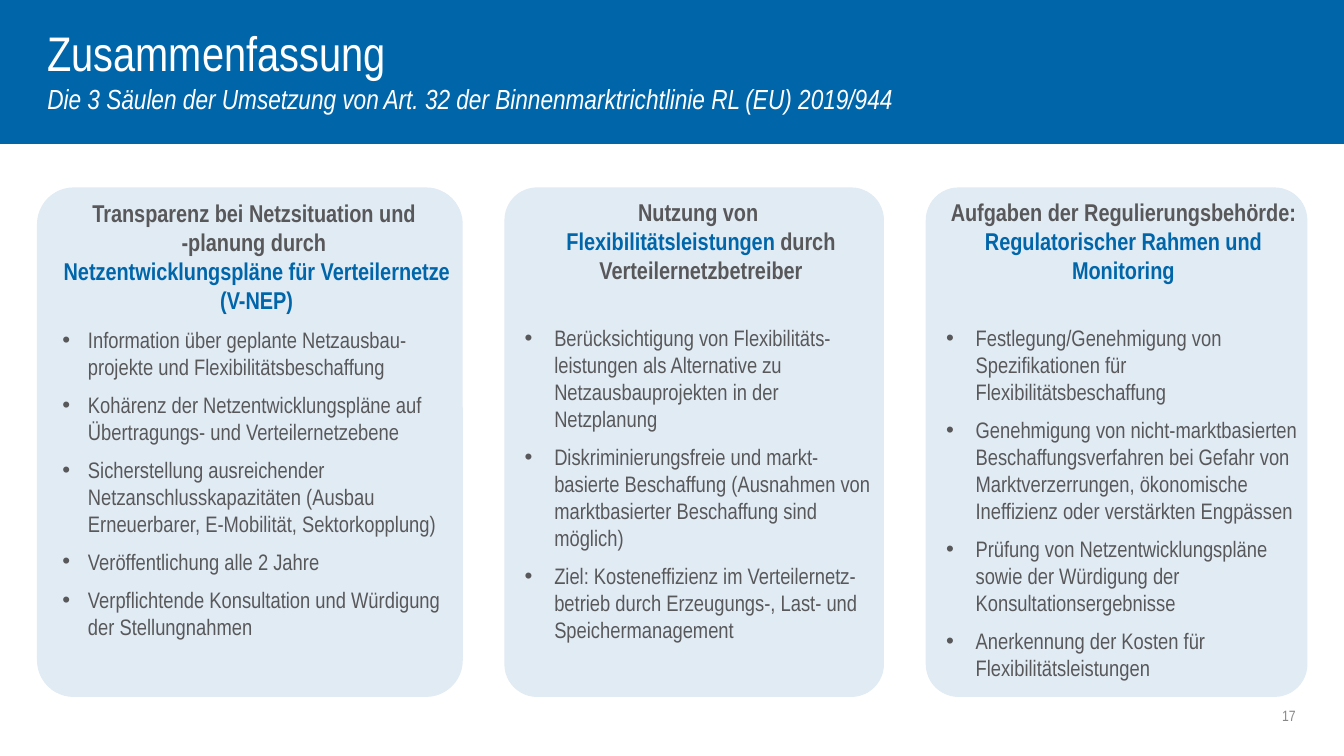
from typing import NamedTuple

from lxml.etree import SubElement
from pptx import Presentation
from pptx.dml.color import RGBColor
from pptx.enum.shapes import MSO_SHAPE
from pptx.enum.text import MSO_ANCHOR, MSO_AUTO_SIZE, PP_ALIGN
from pptx.oxml.ns import qn
from pptx.util import Inches, Pt

FONT = "Arial Narrow"
BLUE, PALE, GREY, LIGHT_GREY, WHITE = "0066A9", "E1EBF4", "58585A", "87888A", "FFFFFF"
SLIDE_WIDTH = Inches(10)
SLIDE_HEIGHT = SLIDE_WIDTH * 9 // 16
CARD_TOP, CARD_HEIGHT = 24.8, 67.4
HEADING_LINE = 15.5  # points


class Box(NamedTuple):
    """Left, top, width and height in percent of the slide."""
    left: float
    top: float
    width: float
    height: float

    def lengths(self) -> tuple[int, int, int, int]:
        return (round(SLIDE_WIDTH * self.left / 100), round(SLIDE_HEIGHT * self.top / 100),
                round(SLIDE_WIDTH * self.width / 100), round(SLIDE_HEIGHT * self.height / 100))


class Pillar(NamedTuple):
    left: float
    width: float
    hanging: float  # inches
    spare_lines: int  # heading lines left free so that all lists start level
    heading: list[tuple[str, str]]
    points: list[str]


PILLARS = [
    Pillar(2.75, 31.68, 0.19, 0,
           [("Transparenz bei Netzsituation und \v-planung durch \v", GREY),
            ("Netzentwicklungspläne für Verteilernetze (V-NEP)", BLUE)],
           ["Information über geplante Netzausbau-projekte und Flexibilitätsbeschaffung",
            "Kohärenz der Netzentwicklungspläne auf Übertragungs- und Verteilernetzebene",
            "Sicherstellung ausreichender Netzanschlusskapazitäten "
            "(Ausbau Erneuerbarer, E-Mobilität, Sektorkopplung)",
            "Veröffentlichung alle 2 Jahre",
            "Verpflichtende Konsultation und Würdigung der Stellungnahmen"]),
    Pillar(37.53, 28.24, 0.22, 1,
           [("Nutzung von \v", GREY), ("Flexibilitätsleistungen ", BLUE),
            ("durch Verteilernetzbetreiber", GREY)],
           ["Berücksichtigung von Flexibilitäts-leistungen als Alternative zu "
            "Netzausbauprojekten in der Netzplanung",
            "Diskriminierungsfreie und markt-basierte Beschaffung "
            "(Ausnahmen von marktbasierter Beschaffung sind möglich)",
            "Ziel: Kosteneffizienz im Verteilernetz-betrieb durch "
            "Erzeugungs-, Last- und Speichermanagement"]),
    Pillar(68.88, 28.4, 0.22, 1,
           [("Aufgaben der Regulierungsbehörde: ", GREY),
            ("Regulatorischer Rahmen und Monitoring", BLUE)],
           ["Festlegung/Genehmigung von Spezifikationen für Flexibilitätsbeschaffung",
            "Genehmigung von nicht-marktbasierten Beschaffungsverfahren bei Gefahr von "
            "Marktverzerrungen, ökonomische Ineffizienz oder verstärkten Engpässen",
            "Prüfung von Netzentwicklungspläne sowie der Würdigung der Konsultationsergebnisse",
            "Anerkennung der Kosten für Flexibilitätsleistungen"]),
]


def color(value: str) -> RGBColor:
    return RGBColor.from_string(value)


def prepare_frame(shape, anchor=MSO_ANCHOR.MIDDLE, bottom: float = 0):
    """Fix the size, clear the margins and return the text frame."""
    frame = shape.text_frame
    frame.word_wrap = True
    frame.auto_size = MSO_AUTO_SIZE.NONE
    frame.vertical_anchor = anchor
    frame.margin_left = frame.margin_right = frame.margin_top = 0
    frame.margin_bottom = Inches(bottom)
    return frame


def write(paragraph, runs, *, size: float, bold: bool = False, italic: bool = False,
          align=PP_ALIGN.LEFT, margin: float = 0, hanging: float = 0,
          bullet: str = "", after: float = 0) -> None:
    """Fill a paragraph with (text, colour) runs; \\v stands for a line break."""
    properties = paragraph._p.get_or_add_pPr()
    properties.set("marL", str(Inches(margin)))
    properties.set("indent", str(-Inches(hanging)))
    if bullet:
        SubElement(properties, qn("a:buFont")).set("typeface", "Arial")
        SubElement(properties, qn("a:buChar")).set("char", bullet)
    else:
        SubElement(properties, qn("a:buNone"))
    paragraph.alignment = align
    paragraph.space_before, paragraph.space_after = Pt(0), Pt(after)
    for text, run_color in runs:
        for number, part in enumerate(text.split("\v")):
            if number:
                paragraph.add_line_break()
            if part:
                run = paragraph.add_run()
                run.text = part
                font = run.font
                font.name, font.size, font.bold, font.italic = FONT, Pt(size), bold, italic
                font.color.rgb = color(run_color)


def add_block(slide, kind, box: Box, fill: str):
    shape = slide.shapes.add_shape(kind, *box.lengths())
    shape.shadow.inherit = False
    shape.fill.solid()
    shape.fill.fore_color.rgb = color(fill)
    shape.line.fill.background()
    return shape


def place(shape, box: Box) -> None:
    shape.left, shape.top, shape.width, shape.height = box.lengths()


def add_pillar(slide, pillar: Pillar) -> None:
    card = add_block(slide, MSO_SHAPE.ROUNDED_RECTANGLE,
                     Box(pillar.left, CARD_TOP, pillar.width, CARD_HEIGHT), PALE)
    card.adjustments[0] = 0.086
    frame = prepare_frame(card, MSO_ANCHOR.TOP)
    write(frame.paragraphs[0], pillar.heading, size=13, bold=True, align=PP_ALIGN.CENTER,
          margin=0.1, after=6 + pillar.spare_lines * HEADING_LINE)
    for point in pillar.points:
        write(frame.add_paragraph(), [(point, GREY)], size=12, margin=0.3,
              hanging=pillar.hanging, bullet="•", after=6)


def main() -> None:
    presentation = Presentation()
    presentation.slide_width, presentation.slide_height = SLIDE_WIDTH, SLIDE_HEIGHT
    slide = presentation.slides.add_slide(presentation.slide_layouts[1])
    title, subtitle = slide.placeholders

    # Header band behind the title
    band = add_block(slide, MSO_SHAPE.RECTANGLE, Box(0, 0, 100, 18.92), BLUE)
    band.line.color.rgb = color(BLUE)
    band.line.width = Pt(1)
    title._element.addprevious(band._element)

    # Title and subtitle
    place(title, Box(3.52, 3.74, 72.8, 6.93))
    write(prepare_frame(title, bottom=0.04).paragraphs[0],
          [("Zusammenfassung", WHITE)], size=26)
    place(subtitle, Box(3.52, 10.84, 72.8, 4.27))
    write(prepare_frame(subtitle).paragraphs[0],
          [("Die 3 Säulen der Umsetzung von Art. 32 der Binnenmarktrichtlinie RL (EU) 2019/944",
            WHITE)], size=14.8, italic=True)

    # Slide number
    number = slide.shapes.add_textbox(*Box(84.62, 92.8, 11.8, 3.56).lengths())
    write(prepare_frame(number).paragraphs[0], [("17", LIGHT_GREY)], size=8,
          align=PP_ALIGN.RIGHT)

    # Three pillars
    for pillar in PILLARS:
        add_pillar(slide, pillar)

    presentation.save("out.pptx")


if __name__ == "__main__":
    main()
